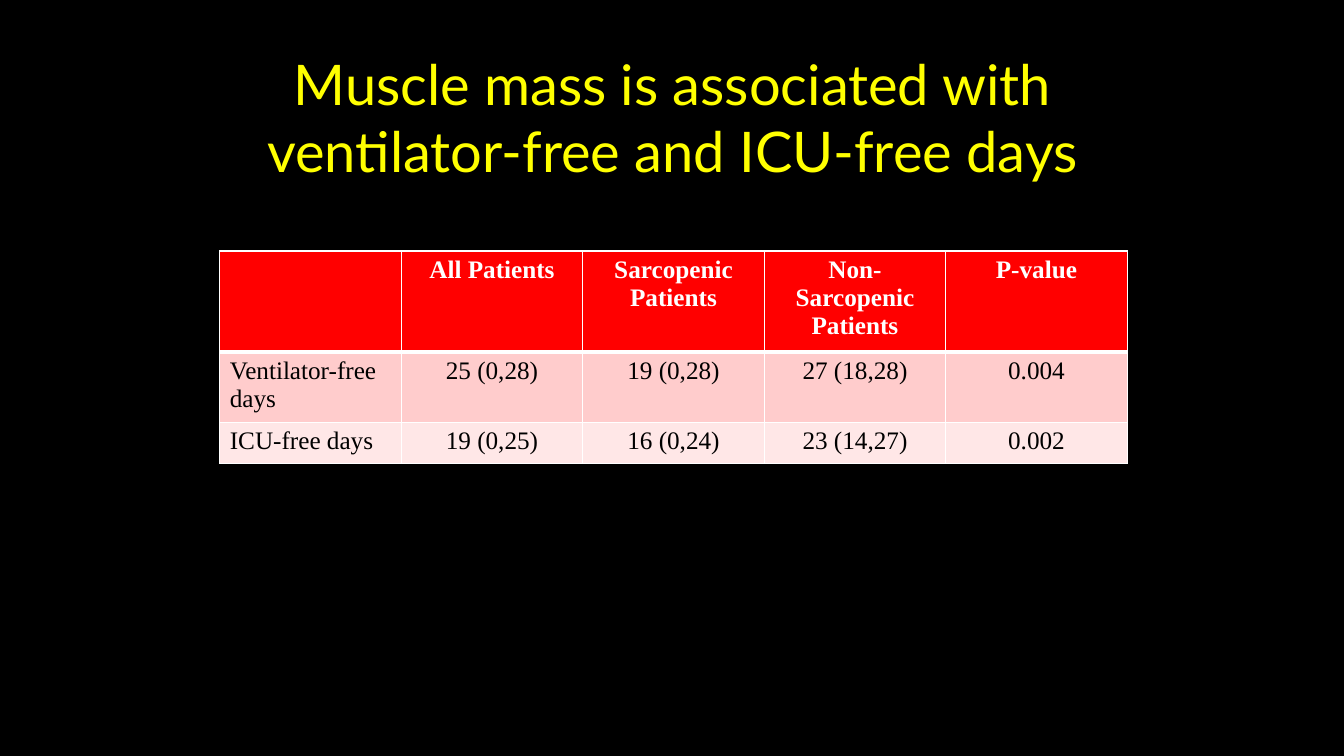
"""Build a slide with a table relating muscle mass to ventilator-free and ICU-free days."""
import pptx
import pptx.dml.color
import pptx.enum.text
import pptx.util
import lxml.etree
from pptx.util import Inches

ALIGN = pptx.enum.text.PP_ALIGN


def color(hex_code):
    return pptx.dml.color.RGBColor.from_string(hex_code)


def add_border(cell, side, points):
    properties = cell._tc.get_or_add_tcPr()
    tag = pptx.oxml.ns.qn
    line = lxml.etree.SubElement(properties, tag(f"a:ln{side}"), w=str(pptx.util.Pt(points)))
    fill = lxml.etree.SubElement(line, tag("a:solidFill"))
    lxml.etree.SubElement(fill, tag("a:srgbClr"), val="FFFFFF")


presentation = pptx.Presentation()
presentation.slide_width = Inches(13.33)
presentation.slide_height = Inches(7.5)
slide = presentation.slides.add_slide(presentation.slide_layouts[6])
slide.background.fill.solid()
slide.background.fill.fore_color.rgb = color("000000")

title = slide.shapes.add_textbox(Inches(2.17), Inches(0.53), Inches(9), Inches(1.25)).text_frame
title.word_wrap = True
title.vertical_anchor = pptx.enum.text.MSO_ANCHOR.MIDDLE
heading = title.paragraphs[0]
heading.alignment = ALIGN.CENTER
heading_run = heading.add_run()
heading_run.text = "Muscle mass is associated with ventilator-free and ICU-free days"
for name, value in {"name": "Lato", "size": pptx.util.Pt(40)}.items():
    setattr(heading_run.font, name, value)
heading_run.font.color.rgb = color("FFFF00")

outcomes = [
    ["", "All Patients", "Sarcopenic Patients", "Non-Sarcopenic Patients", "P-value"],
    ["Ventilator-free days", "25 (0,28)", "19 (0,28)", "27 (18,28)", "0.004"],
    ["ICU-free days", "19 (0,25)", "16 (0,24)", "23 (14,27)", "0.002"],
]
row_heights = [1, 0.7, 0.41]
row_fills = ["FF0000", "FFCCCC", "FFE7E7"]

table = slide.shapes.add_table(
    len(outcomes), len(outcomes[0]), Inches(2.18), Inches(2.49), Inches(9), Inches(sum(row_heights))
).table
for column in table.columns:
    column.width = Inches(1.8)

for row, (values, height, row_fill) in enumerate(zip(outcomes, row_heights, row_fills)):
    table.rows[row].height = Inches(height)
    is_header = row == 0
    border_widths = {"L": 1, "R": 1, "T": 3 if row == 1 else 1, "B": 3 if is_header else 1}
    text_format = {"name": "Times New Roman", "size": pptx.util.Pt(18), "bold": is_header}
    for col, value in enumerate(values):
        cell = table.cell(row, col)
        for side, points in border_widths.items():
            add_border(cell, side, points)
        cell.fill.solid()
        cell.fill.fore_color.rgb = color(row_fill)
        if not value:
            continue
        paragraph = cell.text_frame.paragraphs[0]
        paragraph.alignment = ALIGN.CENTER if col else ALIGN.LEFT
        run = paragraph.add_run()
        run.text = value
        for name, setting in text_format.items():
            setattr(run.font, name, setting)
        run.font.color.rgb = color("FFFFFF" if is_header else "000000")

presentation.save("out.pptx")
